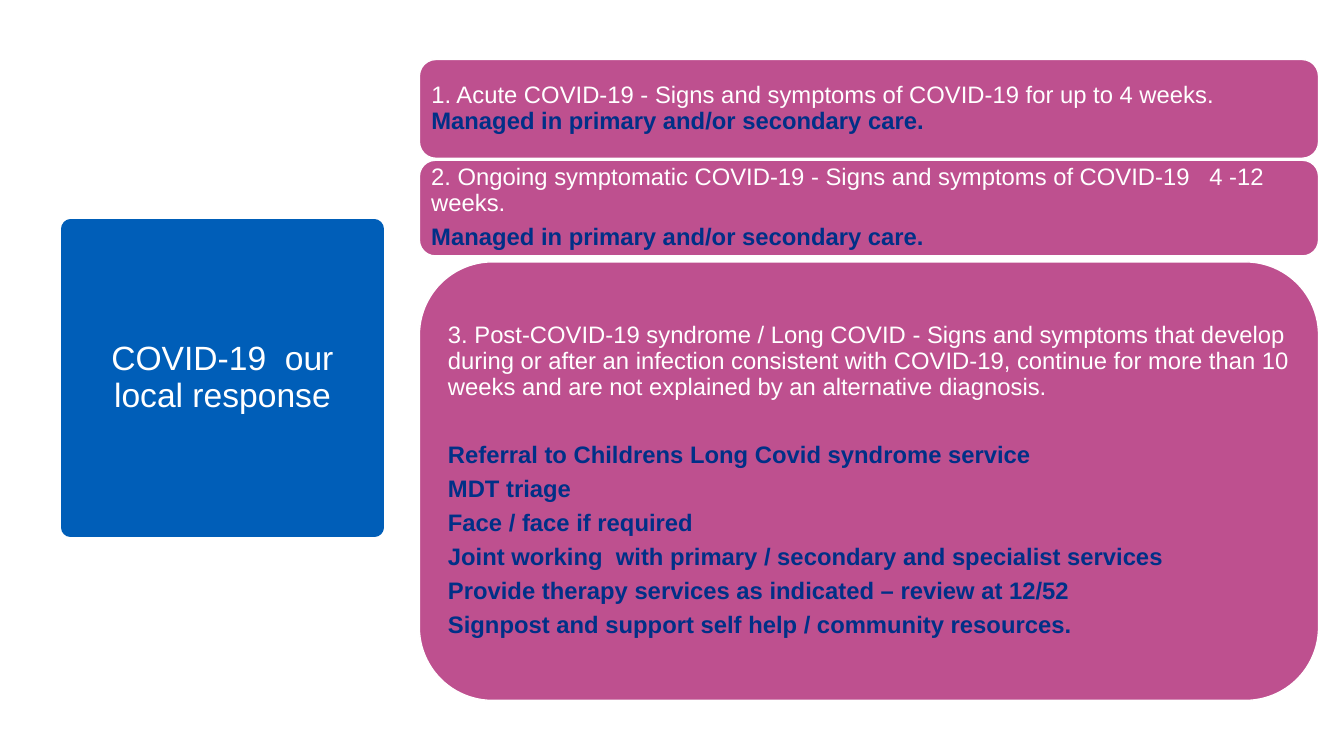
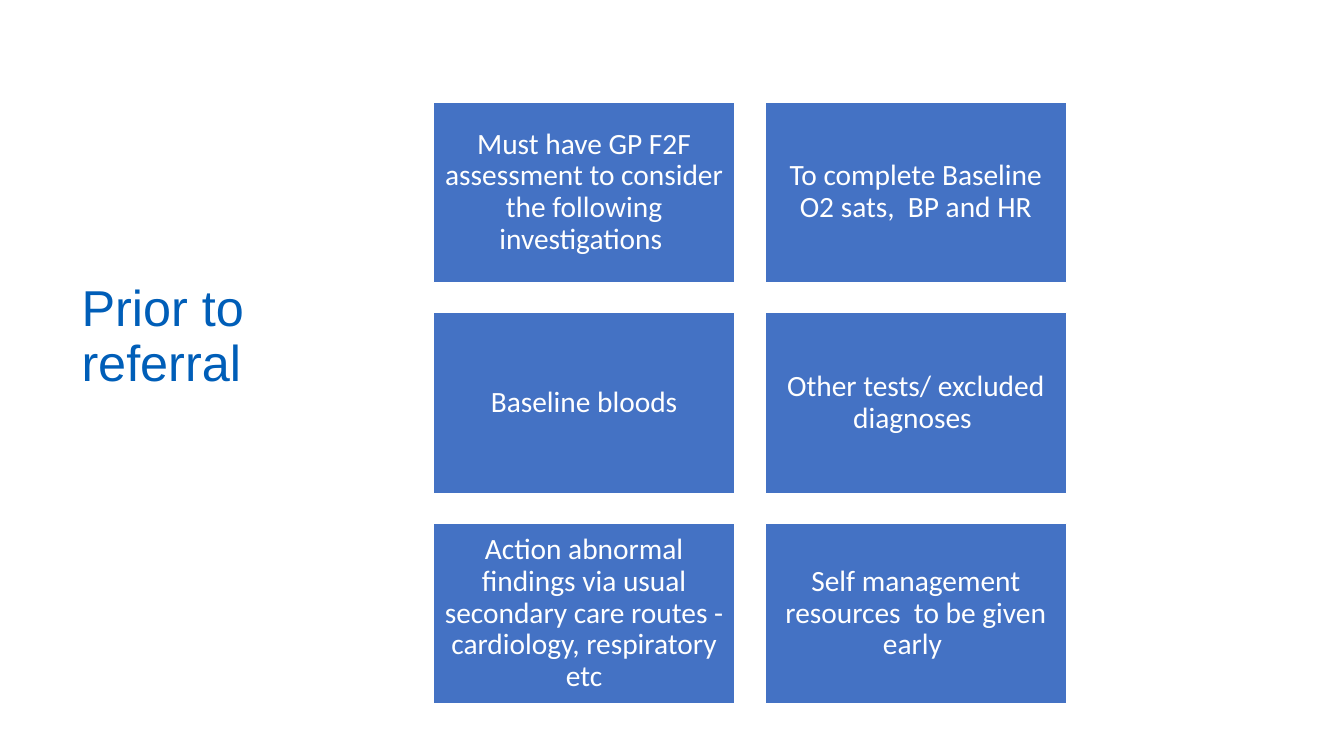
from lxml.etree import SubElement
from pptx import Presentation
from pptx.dml.color import RGBColor
from pptx.enum.shapes import MSO_SHAPE
from pptx.enum.text import MSO_ANCHOR, MSO_AUTO_SIZE, PP_ALIGN
from pptx.oxml.ns import qn
from pptx.util import Cm, Pt

RECT, ROUND = MSO_SHAPE.RECTANGLE, MSO_SHAPE.ROUNDED_RECTANGLE
LEFT, CENTER = PP_ALIGN.LEFT, PP_ALIGN.CENTER
MIDDLE, FIXED = MSO_ANCHOR.MIDDLE, MSO_AUTO_SIZE.NONE

WHITE, BLUE, NAVY, PINK, TILE = "FFFFFF", "005EB8", "003087", "AE2573", "4472C4"
SANS, BODY = "Arial", "Calibri"

CARE = ("Managed in primary and/or secondary care.", True)
STAGES = [
    (1.5, 2.49, [
        (6, [("1. Acute COVID-19 - Signs and symptoms of COVID‑19 for up to 4 weeks. ", False), CARE]),
    ]),
    (4.04, 2.41, [
        (6, [("2. Ongoing symptomatic COVID-19 - Signs and symptoms of COVID‑19   4 -12 weeks.", False)]),
        (6, [CARE]),
    ]),
    (6.6, 11.05, [
        (30, [("3. Post-COVID-19 syndrome / Long COVID - Signs and symptoms that develop "
               "during or after an infection consistent with COVID‑19, continue for more than "
               "10 weeks and are not explained by an alternative diagnosis.", False)]),
        (6, [("Referral to Childrens Long Covid syndrome service", True)]),
        (6, [("MDT triage", True)]),
        (6, [("Face / face if required", True)]),
        (6, [("Joint working  with primary / secondary and specialist services", True)]),
        (6, [("Provide therapy services as indicated – review at 12/52", True)]),
        (6, [("Signpost and support self help / community resources.", True)]),
    ]),
]
CHECKS = [
    "Must have GP F2F assessment to consider the following investigations ",
    "To complete Baseline O2 sats,  BP and HR",
    "Baseline bloods",
    "Other tests/ excluded diagnoses ",
    "Action abnormal findings via usual secondary care routes - cardiology, respiratory etc",
    "Self management resources  to be given early ",
]
COLS, WIDE, HIGH, GAP = 2, 7.6, 4.55, 0.76


def rgb(code):
    return RGBColor.from_string(code)


def paint(shape, fill, line, width):
    shape.fill.solid()
    shape.fill.fore_color.rgb = rgb(fill)
    shape.line.color.rgb = rgb(line)
    shape.line.width = Pt(width)


def write(frame, paras, align, font, size):
    frame.word_wrap = True
    frame.auto_size = FIXED
    frame.vertical_anchor = MIDDLE
    for i, (after, runs) in enumerate(paras):
        para = frame.add_paragraph() if i else frame.paragraphs[0]
        para.alignment = align
        para.line_spacing = 0.9
        para.space_before = Pt(0)
        para.space_after = Pt(after)
        for text, color, bold in runs:
            run = para.add_run()
            run.text = text
            run.font.name = font
            run.font.size = Pt(size)
            run.font.bold = bold
            run.font.color.rgb = rgb(color)


def start(deck, text, place, align, size, color):
    slide = deck.slides.add_slide(deck.slide_layouts[5])
    title = slide.shapes.title
    title.left, title.top, title.width, title.height = map(Cm, place)
    write(title.text_frame, [(0, [(text, color, False)])], align, SANS, size)
    return slide


def panel(slide, kind, place, fill, inset):
    shape = slide.shapes.add_shape(kind, *map(Cm, place))
    shape.shadow.inherit = False
    paint(shape, fill, WHITE, 1)
    frame = shape.text_frame
    frame.margin_left = frame.margin_right = Cm(inset)
    frame.margin_top = frame.margin_bottom = Cm(inset)
    return shape


def fade(shape, share):
    color = shape.element.spPr.find(qn("a:solidFill")).find(qn("a:srgbClr"))
    SubElement(color, qn("a:alpha")).set("val", str(share * 1000))


def response(deck):
    slide = start(deck, "COVID-19  our local response", (1.78, 5.77, 7.65, 7.52), CENTER, 24, WHITE)
    paint(slide.shapes.title, BLUE, BLUE, 13.75)
    for top, high, paras in STAGES:
        box = panel(slide, ROUND, (10.57, top, 22.66, high), PINK, 0.18)
        fade(box, 80)
        lines = [(after, [(text, NAVY if strong else WHITE, strong) for text, strong in runs])
                 for after, runs in paras]
        write(box.text_frame, lines, LEFT, SANS, 17)


def referral(deck):
    slide = start(deck, "Prior to referral", (1.8, 4.01, 7.9, 8.99), LEFT, 36, BLUE)
    for i, text in enumerate(CHECKS):
        row, col = divmod(i, COLS)
        place = (10.92 + col * (WIDE + GAP), 2.57 + row * (HIGH + GAP), WIDE, HIGH)
        box = panel(slide, RECT, place, TILE, 0.23)
        write(box.text_frame, [(7, [(text, WHITE, False)])], CENTER, BODY, 21)


def main():
    deck = Presentation()
    deck.slide_width, deck.slide_height = Cm(33.87), Cm(19.05)
    response(deck)
    referral(deck)
    deck.save("out.pptx")


if __name__ == "__main__":
    main()
